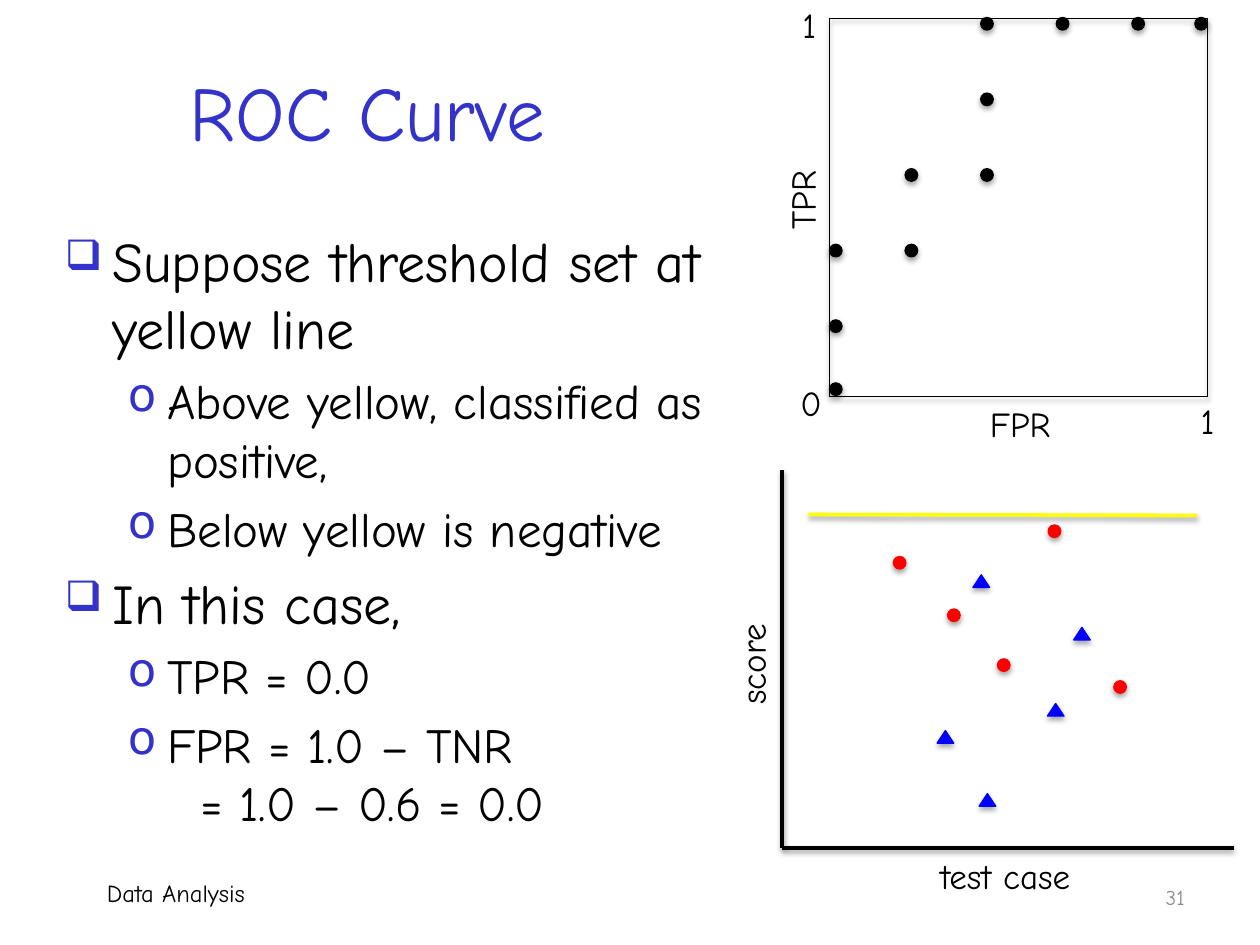
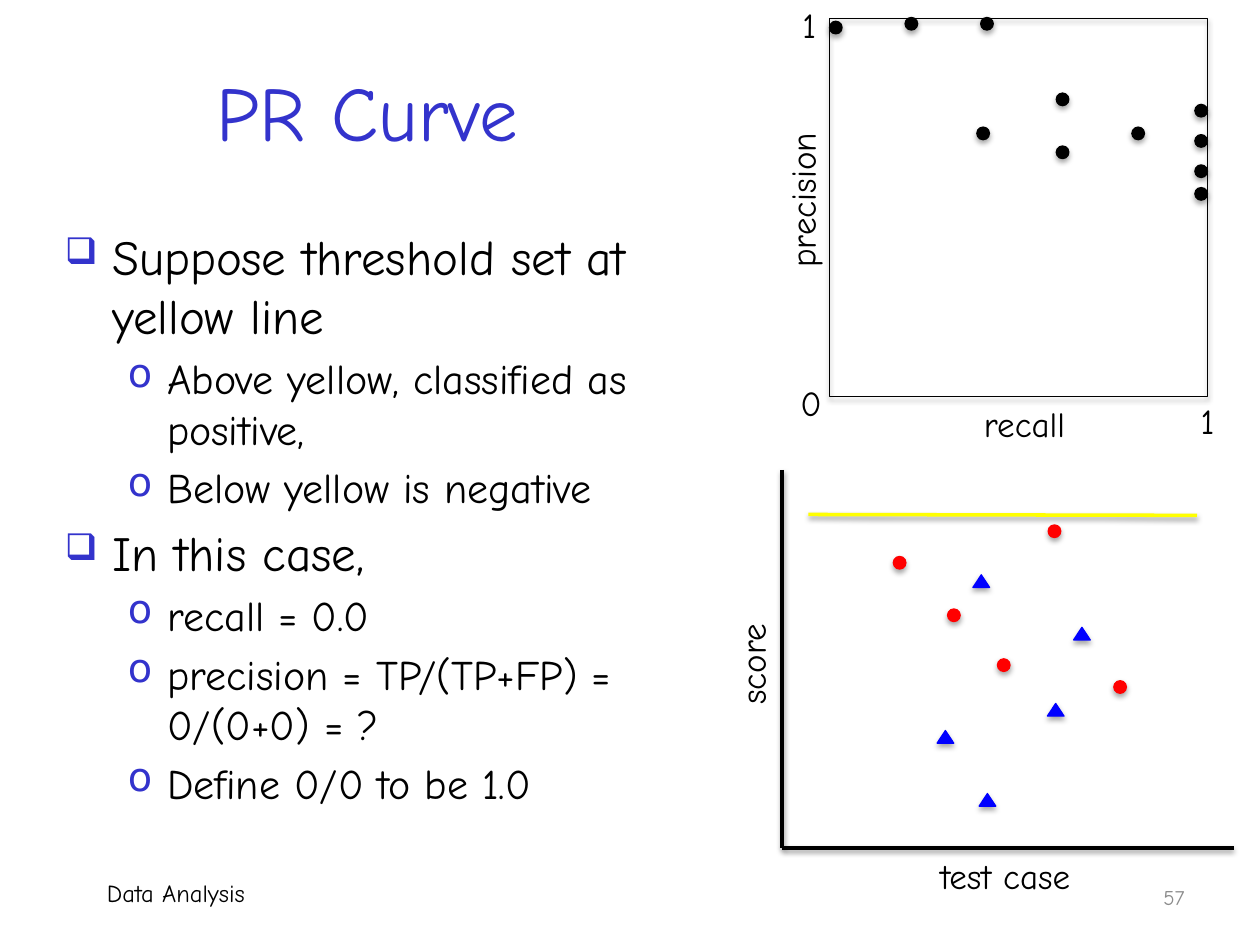
"""Build two slides that pair a performance curve with the scored test cases behind it."""
from lxml.etree import SubElement
from pptx import Presentation
from pptx.dml.color import RGBColor
from pptx.enum.shapes import MSO_CONNECTOR as Connector, MSO_SHAPE as Preset
from pptx.enum.text import MSO_ANCHOR as Anchor, PP_ALIGN as Align
from pptx.oxml.ns import qn
from pptx.util import Pt

COLORS = {"title": "3333CC", "text": "000000", "number": "8C8C8C",
          "positive": "FF0000", "negative": "0000FF", "threshold": "FFFF00"}
BULLETS = [("❑", 75, 27, 27), ("o", 95, 58.5, 22.5)]
DOT = 7.2
PLOT_LEFT, PLOT_TOP, PLOT_SIZE = 474, 10.5, 216
POSITIVES = [(510.5, 318), (599, 300), (541.5, 348), (570, 376.5), (636.5, 389)]
NEGATIVES = [(535.5, 417.5), (556, 328.5), (598.5, 402), (613.5, 358.5), (559.5, 453.5)]

THRESHOLD_POINTS = [
    (0, "Suppose threshold set at yellow line"),
    (1, "Above yellow, classified as positive,"),
    (1, "Below yellow is negative"),
    (0, "In this case,"),
]
CURVES = [
    {
        "title": "ROC Curve", "number": "31", "sizes": (32, 28),
        "points": [(1, "TPR = 0.0"), (1, "FPR = 1.0 – TNR"), (None, "= 1.0 – 0.6 = 0.0")],
        "x_label": ("FPR", 583, 50), "y_label": ("TPR", 51),
        "dots": [(1, 1), (0.8, 1), (0.6, 1), (0.4, 1), (0.4, 0.8), (0.4, 0.6),
                 (0.2, 0.6), (0.2, 0.4), (0, 0.4), (0, 0.2), (0, 0)],
    },
    {
        "title": "PR Curve", "number": "57", "sizes": (28, 24),
        "points": [(1, "recall = 0.0"), (1, "precision = TP/(TP+FP) = 0/(0+0) = ?"),
                   (1, "Define 0/0 to be 1.0")],
        "x_label": ("recall", 585.5, 67), "y_label": ("precision", 98.5),
        "dots": [(0, 0.99), (0.2, 1), (0.4, 1), (0.39, 0.71), (0.6, 0.8), (0.6, 0.66),
                 (0.8, 0.71), (1, 0.77), (1, 0.69), (1, 0.61), (1, 0.55)],
    },
]


def rgb(name):
    return RGBColor.from_string(COLORS[name])


def write(paragraph, text, *, size, color="text", align=Align.LEFT, font="Comic Neue"):
    paragraph.alignment = align
    run = paragraph.add_run()
    run.text = text
    run.font.name = font
    run.font.size = Pt(size)
    run.font.color.rgb = rgb(color)


class Deck:
    def __init__(self):
        self.presentation = Presentation()
        self.presentation.slide_width = Pt(720)
        self.presentation.slide_height = Pt(540)
        self.slide = None

    def new_slide(self):
        self.slide = self.presentation.slides.add_slide(self.presentation.slide_layouts[6])

    def frame(self, left, top, width, height, anchor=Anchor.TOP, wrap=True, rotation=0):
        box = self.slide.shapes.add_textbox(Pt(left), Pt(top), Pt(width), Pt(height))
        box.rotation = rotation
        box.text_frame.word_wrap = wrap
        box.text_frame.vertical_anchor = anchor
        return box.text_frame

    def text(self, text, *place, anchor=Anchor.TOP, **style):
        write(self.frame(*place, anchor=anchor).paragraphs[0], text, **style)

    def label(self, text, center_x, center_y, width, rotation=0):
        height = 31.7
        frame = self.frame(center_x - width / 2, center_y - height / 2, width, height,
                           wrap=False, rotation=rotation)
        write(frame.paragraphs[0], text, size=20, align=Align.CENTER)

    def bullet_list(self, points, sizes):
        frame = self.frame(30, 126, 384, 360)
        for index, (level, text) in enumerate(points):
            paragraph = frame.add_paragraph() if index else frame.paragraphs[0]
            size = sizes[1 if level is None else level]
            paragraph.space_before = Pt(0 if level is None else 0.2 * size)
            write(paragraph, text, size=size)
            self.bullet(paragraph, level)

    def bullet(self, paragraph, level):
        paragraph.level = 1 if level is None else level
        properties = paragraph._p.get_or_add_pPr()
        if level is None:
            properties.set("marL", str(Pt(77.5)))
            properties.set("indent", "0")
            SubElement(properties, qn("a:buNone"))
            return
        character, percent, margin, hang = BULLETS[level]
        properties.set("marL", str(Pt(margin)))
        properties.set("indent", str(Pt(-hang)))
        color = SubElement(properties, qn("a:buClr"))
        SubElement(color, qn("a:srgbClr"), val=COLORS["title"])
        SubElement(properties, qn("a:buSzPct"), val=str(percent * 1000))
        SubElement(properties, qn("a:buChar"), char=character)

    def cast_shadow(self, shape, percent, distance):
        effects = SubElement(shape.element.spPr, qn("a:effectLst"))
        shadow = SubElement(effects, qn("a:outerShdw"), blurRad=str(Pt(3.1)),
                            dist=str(Pt(distance)), dir="5400000", rotWithShape="0")
        color = SubElement(shadow, qn("a:srgbClr"), val=COLORS["text"])
        SubElement(color, qn("a:alpha"), val=str(percent * 1000))

    def line(self, start_x, start_y, end_x, end_y, color="text"):
        line = self.slide.shapes.add_connector(
            Connector.STRAIGHT, Pt(start_x), Pt(start_y), Pt(end_x), Pt(end_y))
        line.line.color.rgb = rgb(color)
        line.line.width = Pt(2)
        self.cast_shadow(line, 38, 1.6)

    def shape(self, preset, left, top, width, height, color="text", filled=True):
        shape = self.slide.shapes.add_shape(preset, Pt(left), Pt(top), Pt(width), Pt(height))
        if filled:
            shape.fill.solid()
            shape.fill.fore_color.rgb = rgb(color)
        else:
            shape.fill.background()
        shape.line.color.rgb = rgb(color)
        shape.line.width = Pt(0.75)
        self.cast_shadow(shape, 35, 1.8)

    def score_plot(self):
        self.line(447, 268.5, 447, 484.5)
        self.line(447, 484.5, 705, 484.5)
        self.label("score", 430, 379.5, 66, rotation=270)
        self.label("test case", 574.5, 500.5, 102)
        for left, top in NEGATIVES:
            self.shape(Preset.ISOSCELES_TRIANGLE, left, top, 9.5, DOT, "negative")
        for left, top in POSITIVES:
            self.shape(Preset.OVAL, left, top, DOT, DOT, "positive")
        self.line(462, 294, 684, 294.5, "threshold")

    def curve_plot(self, x_label, y_label, dots):
        y_text, y_width = y_label
        x_text, x_center, x_width = x_label
        self.label(y_text, 458.5, 114.5, y_width, rotation=270)
        self.label(x_text, x_center, 242.5, x_width)
        self.shape(Preset.RECTANGLE, PLOT_LEFT, PLOT_TOP, PLOT_SIZE, PLOT_SIZE, filled=False)
        self.label("1", 690, 240.5, 24)
        self.label("1", 462.5, 14.5, 24)
        self.label("0", 463.5, 230.5, 27)
        reach = PLOT_SIZE - DOT
        for x, y in dots:
            left = PLOT_LEFT + min(x * PLOT_SIZE, reach)
            top = PLOT_TOP - 0.5 + min((1 - y) * PLOT_SIZE, reach)
            self.shape(Preset.OVAL, left, top, DOT, DOT)

    def curve_slide(self, curve):
        self.new_slide()
        self.text(curve["title"], 12, 18, 396, 90, anchor=Anchor.MIDDLE,
                  size=44, color="title", align=Align.CENTER)
        self.bullet_list(THRESHOLD_POINTS + curve["points"], curve["sizes"])
        self.text("Data Analysis", 54, 498, 318, 30, size=14)
        self.text(curve["number"], 516, 498, 168, 29, anchor=Anchor.MIDDLE,
                  size=12, color="number", align=Align.RIGHT)
        self.score_plot()
        self.curve_plot(curve["x_label"], curve["y_label"], curve["dots"])


def main():
    deck = Deck()
    for curve in CURVES:
        deck.curve_slide(curve)
    deck.presentation.save("out.pptx")


if __name__ == "__main__":
    main()
